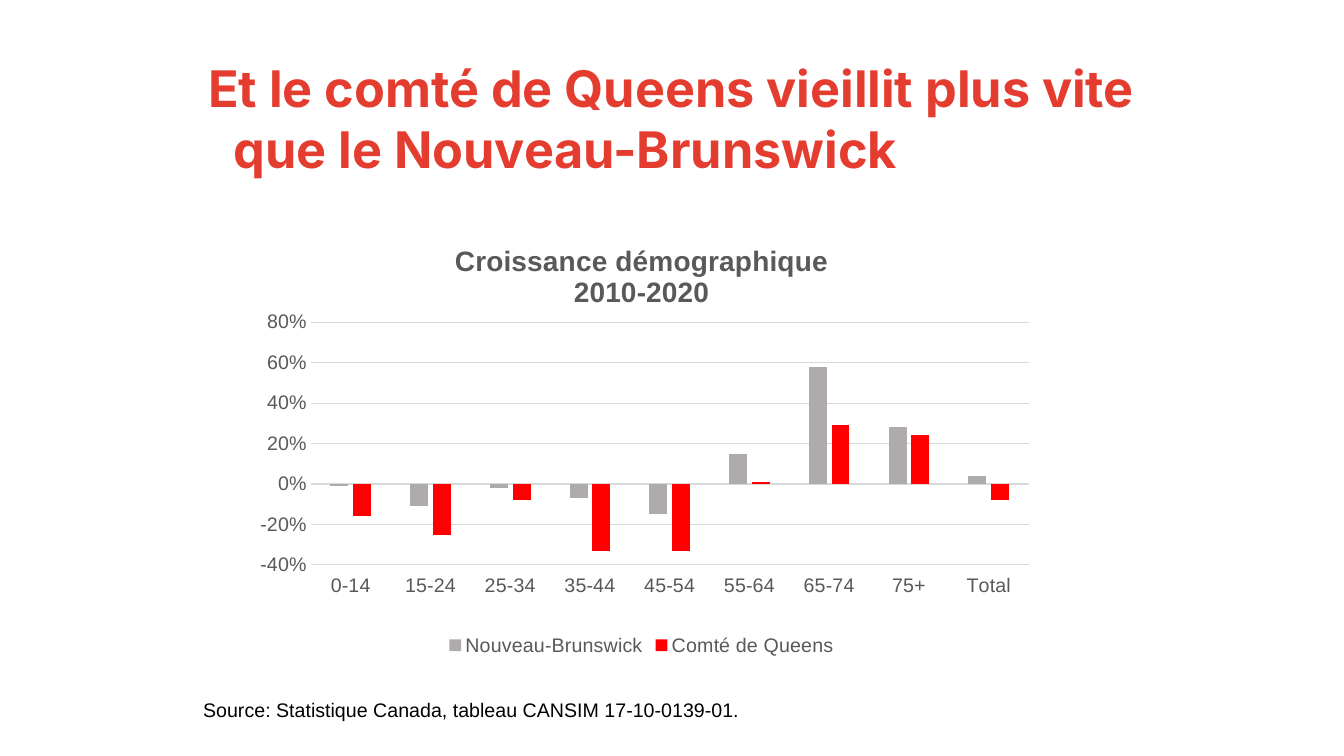
import pptx
import pptx.chart.data
import pptx.dml.color
import pptx.enum.chart
import pptx.oxml
import pptx.oxml.ns
import pptx.util

PX = 9525
COLORS = {
    "title": "E43D30", "black": "000000", "label": "595959",
    "line": "D9D9D9", "province": "AFABAB", "county": "FF0000",
}
AGES = ["0-14", "15-24", "25-34", "35-44", "45-54", "55-64", "65-74", "75+", "Total"]
GROWTH = [
    ("Nouveau-Brunswick", "province", [-0.01, -0.11, -0.02, -0.07, -0.15, 0.15, 0.58, 0.28, 0.04]),
    ("Comté de Queens", "county", [-0.16, -0.25, -0.08, -0.33, -0.33, 0.01, 0.29, 0.24, -0.08]),
]
PLOT_AREA = {"x": 0.09, "y": 0.22, "w": 0.89, "h": 0.56}


def px(*lengths):
    """Turn pixel lengths into EMU."""
    return [pptx.util.Emu(length * PX) for length in lengths]


def color(name):
    """Look up a named colour."""
    return pptx.dml.color.RGBColor.from_string(COLORS[name])


def style_font(font, size, color_name, name="Arial", bold=False):
    """Set the face, size, weight and colour of a font."""
    font.name = name
    font.size = pptx.util.Pt(size)
    font.bold = bold
    font.color.rgb = color(color_name)


def style_line(line_format):
    """Draw a thin grey line."""
    line_format.color.rgb = color("line")
    line_format.width = pptx.util.Pt(0.75)


def add_text(page, place, text, size, color_name, name="Arial", bold=False):
    """Add a wrapped text box and return its paragraph."""
    box = page.shapes.add_textbox(*px(*place))
    box.text_frame.word_wrap = True
    box.text_frame.text = text
    para = box.text_frame.paragraphs[0]
    style_font(para.runs[0].font, size, color_name, name, bold)
    return para


def hang_indent(para, margin, indent):
    """Give a paragraph a left margin and a first-line indent."""
    properties = para._p.get_or_add_pPr()
    for key, length in zip(("marL", "indent"), px(margin, indent)):
        properties.set(key, str(length))


def place_plot(chart):
    """Fix the inner plot area as fractions of the chart."""
    plot_area = chart._chartSpace.chart.plotArea
    for old in plot_area.findall(pptx.oxml.ns.qn("c:layout")):
        plot_area.remove(old)
    modes = '<c:layoutTarget val="inner"/><c:xMode val="edge"/><c:yMode val="edge"/>'
    sizes = "".join(f'<c:{key} val="{part}"/>' for key, part in PLOT_AREA.items())
    plot_area.insert(0, pptx.oxml.parse_xml(
        f'<c:layout {pptx.oxml.ns.nsdecls("c")}><c:manualLayout>'
        f"{modes}{sizes}</c:manualLayout></c:layout>"))


def style_axes(chart):
    """Format the age and percentage axes."""
    ages, percent = chart.category_axis, chart.value_axis
    for axis in (ages, percent):
        axis.major_tick_mark = pptx.enum.chart.XL_TICK_MARK.NONE
        axis.minor_tick_mark = pptx.enum.chart.XL_TICK_MARK.NONE
        style_font(axis.tick_labels.font, 14, "label")
    ages.tick_label_position = pptx.enum.chart.XL_TICK_LABEL_POSITION.LOW
    style_line(ages.format.line)
    percent.minimum_scale, percent.maximum_scale, percent.major_unit = -0.4, 0.8, 0.2
    percent.tick_labels.number_format = "0%"
    percent.tick_labels.number_format_is_linked = False
    percent.format.line.fill.background()
    style_line(percent.major_gridlines.format.line)


def add_growth_chart(page, place):
    """Add the clustered columns of growth by age group."""
    table = pptx.chart.data.CategoryChartData(number_format="0%")
    table.categories = AGES
    for name, _, values in GROWTH:
        table.add_series(name, values)
    kind = pptx.enum.chart.XL_CHART_TYPE.COLUMN_CLUSTERED
    chart = page.shapes.add_chart(kind, *px(*place), table).chart
    style_font(chart.font, 10, "black")

    title = chart.chart_title.text_frame
    title.text = "Croissance démographique\n2010-2020"
    for para in title.paragraphs:
        style_font(para.runs[0].font, 20, "label", bold=True)
    chart.chart_title.include_in_layout = False

    chart.has_legend = True
    chart.legend.position = pptx.enum.chart.XL_LEGEND_POSITION.BOTTOM
    chart.legend.include_in_layout = False
    style_font(chart.legend.font, 14, "label")

    plot = chart.plots[0]
    plot.gap_width, plot.overlap, plot.vary_by_categories = 219, -27, False
    for series, (_, color_name, _) in zip(plot.series, GROWTH):
        series.invert_if_negative = False
        series.format.fill.solid()
        series.format.fill.fore_color.rgb = color(color_name)
    style_axes(chart)
    place_plot(chart)


def main():
    """Build the slide and save it."""
    deck = pptx.Presentation()
    deck.slide_width, deck.slide_height = px(1280, 720)
    page = deck.slides.add_slide(deck.slide_layouts[6])
    heading = add_text(
        page, (165, 50, 932, 149),
        "Et le comté de Queens vieillit plus vite que le Nouveau-Brunswick",
        36, "title", "Inter", True)
    hang_indent(heading, 48, -24)
    add_text(page, (184, 660, 899, 33),
             "Source: Statistique Canada, tableau CANSIM 17-10-0139-01.", 14, "black")
    add_growth_chart(page, (227, 216, 768, 413))
    deck.save("out.pptx")


if __name__ == "__main__":
    main()
